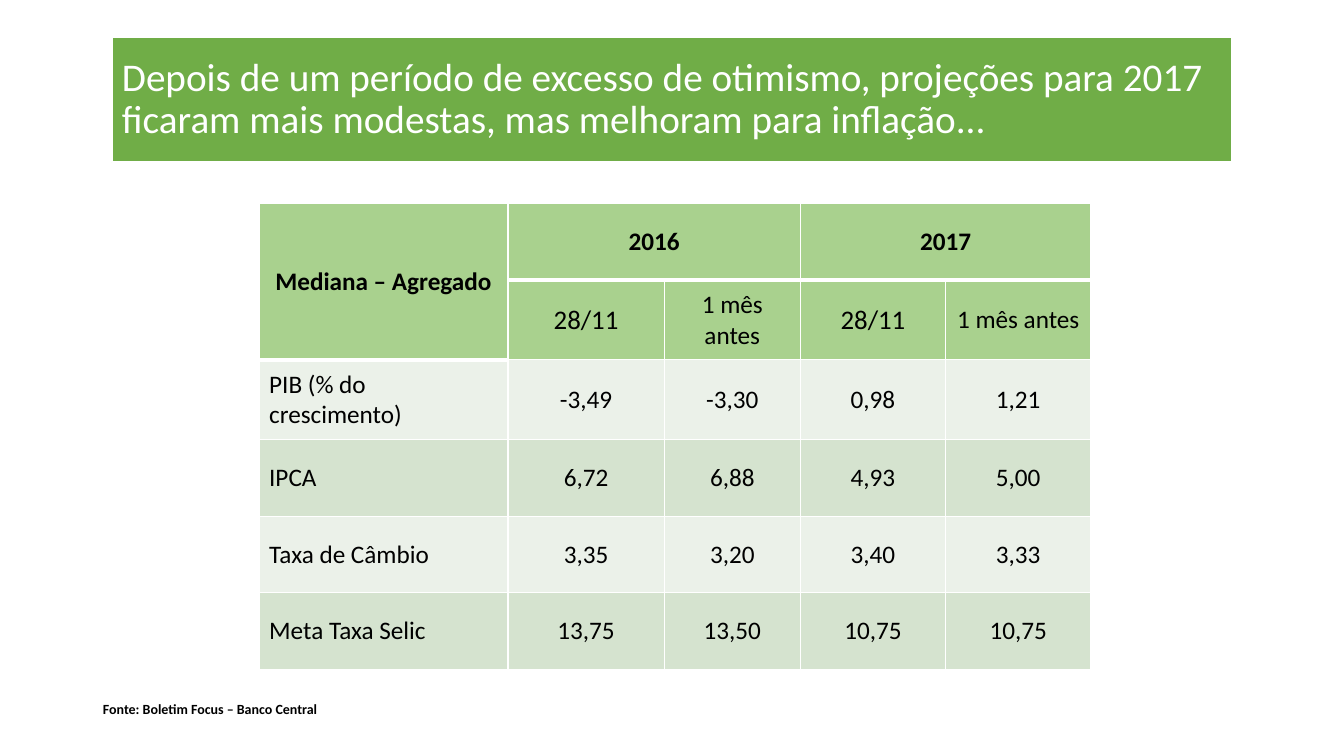
from dataclasses import dataclass

import pptx
import pptx.dml.color
import pptx.enum.text
import pptx.oxml
import pptx.oxml.ns
import pptx.util
from pptx.util import Cm

RGBColor = pptx.dml.color.RGBColor
Align = pptx.enum.text.PP_ALIGN
Anchor = pptx.enum.text.MSO_ANCHOR

WHITE = RGBColor(0xFF, 0xFF, 0xFF)
BLACK = RGBColor(0x00, 0x00, 0x00)
TITLE_GREEN = RGBColor(0x70, 0xAD, 0x47)
HEADER_GREEN = RGBColor(0xA9, 0xD1, 0x8E)
BAND_COLORS = (RGBColor(0xEB, 0xF1, 0xE9), RGBColor(0xD5, 0xE3, 0xCF))

FONT = "Calibri"
COLUMN_WIDTHS = (6.27, 3.94, 3.43, 3.66, 3.66)
ROW_HEIGHTS = (1.93, 2.01, 2.01, 1.93, 1.93, 1.93)
HEADER_ROWS = 2


@dataclass(frozen=True)
class HeaderCell:
    row: int
    column: int
    text: str
    size: float = 18
    bold: bool = False
    rows: int = 1
    columns: int = 1


@dataclass(frozen=True)
class Indicator:
    name: str
    values: tuple[str, ...]


HEADERS = (
    HeaderCell(0, 0, "Mediana – Agregado", bold=True, rows=2),
    HeaderCell(0, 1, "2016", bold=True, columns=2),
    HeaderCell(0, 3, "2017", bold=True, columns=2),
    HeaderCell(1, 1, "28/11", size=19.2),
    HeaderCell(1, 2, "1 mês antes"),
    HeaderCell(1, 3, "28/11", size=19.2),
    HeaderCell(1, 4, "1 mês antes"),
)
INDICATORS = (
    Indicator("PIB (% do crescimento)", ("-3,49", "-3,30", "0,98", "1,21")),
    Indicator("IPCA", ("6,72", "6,88", "4,93", "5,00")),
    Indicator("Taxa de Câmbio", ("3,35", "3,20", "3,40", "3,33")),
    Indicator("Meta Taxa Selic", ("13,75", "13,50", "10,75", "10,75")),
)


def add_span(para, text: str, size: float, color: RGBColor, bold: bool = False) -> None:
    span = para.add_run()
    span.text = text
    span.font.name = FONT
    span.font.size = pptx.util.Pt(size)
    span.font.bold = bold
    span.font.color.rgb = color


def place(shape, left: float, top: float, width: float, height: float) -> None:
    """Position a shape, with lengths in centimetres."""
    shape.left, shape.top = Cm(left), Cm(top)
    shape.width, shape.height = Cm(width), Cm(height)


def prepare_text(shape, anchor):
    """Format a placeholder's frame and return its first paragraph."""
    frame = shape.text_frame
    frame.word_wrap = True
    frame.auto_size = pptx.enum.text.MSO_AUTO_SIZE.NONE
    frame.vertical_anchor = anchor
    para = frame.paragraphs[0]
    para.alignment = Align.LEFT
    para.line_spacing = 0.9
    para.space_before = pptx.util.Pt(0)
    return para


def add_title(page) -> None:
    title = page.shapes.title
    place(title, 2.82, 0.94, 28.24, 3.15)
    title.fill.solid()
    title.fill.fore_color.rgb = TITLE_GREEN
    title.line.color.rgb = WHITE
    title.line.width = pptx.util.Pt(1.5)
    para = prepare_text(title, Anchor.MIDDLE)
    add_span(para, "Depois de um período de excesso de otimismo, projeções para 2017 "
             "ficaram mais modestas, mas melhoram para inflação...", 28, WHITE)


def add_source_note(page) -> None:
    note = page.placeholders[1]
    place(note, 2.34, 17.58, 24.49, 0.97)
    para = prepare_text(note, Anchor.TOP)
    properties = para._p.get_or_add_pPr()
    properties.set("marL", "0")
    properties.set("indent", "0")
    properties.append(pptx.oxml.parse_xml(f"<a:buNone {pptx.oxml.ns.nsdecls('a')}/>"))
    add_span(para, "Fonte: Boletim Focus – Banco Central", 10, BLACK, bold=True)


def set_borders(cell, bottom_width: float) -> None:
    """Draw white borders, 1 pt wide except for the bottom one."""
    properties = cell._tc.get_or_add_tcPr()
    widths = {"lnL": 1, "lnR": 1, "lnT": 1, "lnB": bottom_width}
    for index, (tag, width) in enumerate(widths.items()):
        properties.insert(index, pptx.oxml.parse_xml(
            f'<a:{tag} {pptx.oxml.ns.nsdecls("a")} w="{pptx.util.Pt(width)}">'
            f'<a:solidFill><a:srgbClr val="{WHITE}"/></a:solidFill></a:{tag}>'))


def style_cell(cell, fill: RGBColor, bottom_width: float = 1) -> None:
    cell.fill.solid()
    cell.fill.fore_color.rgb = fill
    cell.vertical_anchor = Anchor.MIDDLE
    set_borders(cell, bottom_width)


def write_cell(cell, text: str, align, size: float = 18, bold: bool = False) -> None:
    para = cell.text_frame.paragraphs[0]
    para.alignment = align
    add_span(para, text, size, BLACK, bold)


def add_projection_table(page) -> None:
    table = page.shapes.add_table(
        len(ROW_HEIGHTS), len(COLUMN_WIDTHS), Cm(6.53), Cm(5.13),
        Cm(sum(COLUMN_WIDTHS)), Cm(sum(ROW_HEIGHTS))).table
    for column, width in zip(table.columns, COLUMN_WIDTHS):
        column.width = Cm(width)
    for row, height in zip(table.rows, ROW_HEIGHTS):
        row.height = Cm(height)

    for header in HEADERS:
        cell = table.cell(header.row, header.column)
        last_row = header.row + header.rows - 1
        last_column = header.column + header.columns - 1
        if (last_row, last_column) != (header.row, header.column):
            cell.merge(table.cell(last_row, last_column))
        for row in range(header.row, last_row + 1):
            for column in range(header.column, last_column + 1):
                style_cell(table.cell(row, column), HEADER_GREEN, 3 if header.bold else 1)
        write_cell(cell, header.text, Align.CENTER, header.size, header.bold)

    for index, indicator in enumerate(INDICATORS):
        for column, text in enumerate((indicator.name, *indicator.values)):
            cell = table.cell(HEADER_ROWS + index, column)
            style_cell(cell, BAND_COLORS[index % 2])
            write_cell(cell, text, Align.CENTER if column else Align.LEFT)


def main() -> None:
    deck = pptx.Presentation()
    deck.slide_width, deck.slide_height = Cm(33.87), Cm(19.05)
    page = deck.slides.add_slide(deck.slide_layouts[1])
    add_title(page)
    add_source_note(page)
    add_projection_table(page)
    deck.save("out.pptx")


if __name__ == "__main__":
    main()
